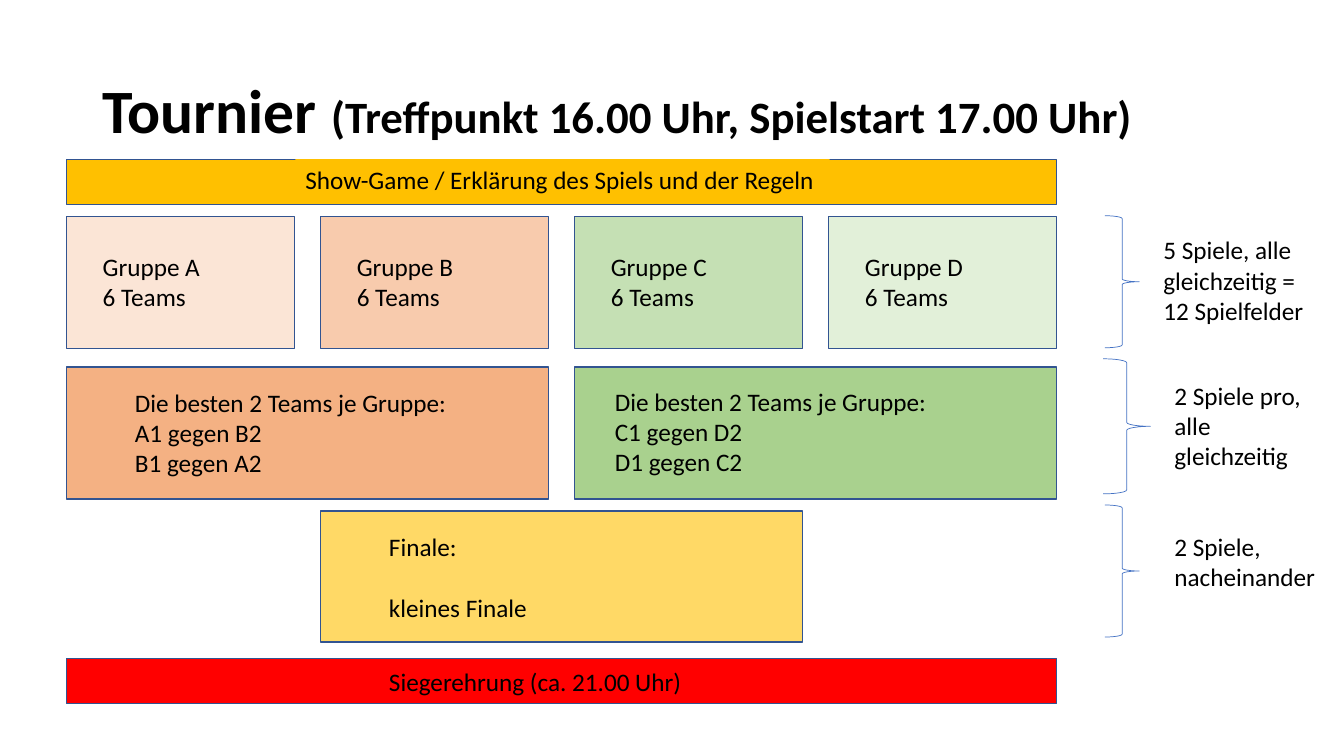
from dataclasses import dataclass

from pptx import Presentation
from pptx.dml.color import RGBColor
from pptx.enum.shapes import MSO_SHAPE
from pptx.enum.text import MSO_ANCHOR
from pptx.util import Inches, Pt

RECTANGLE = MSO_SHAPE.RECTANGLE
RIGHT_BRACE = MSO_SHAPE.RIGHT_BRACE
TOP = MSO_ANCHOR.TOP
MIDDLE = MSO_ANCHOR.MIDDLE

FONT = "Calibri"
COLORS = {
    "text": "000000",
    "outline": "325491",
    "brace": "4472C4",
    "show": "FFC000",
    "group_a": "FBE5D6",
    "group_b": "F8CBAD",
    "group_c": "C5E0B4",
    "group_d": "E2F0D9",
    "semifinal_ab": "F4B183",
    "semifinal_cd": "A9D18E",
    "final": "FFD966",
    "ceremony": "FF0000",
}

GRID_LEFT = 0.66
COLUMN_PITCH = 2.52
COLUMN_GAP = 0.26
LINE_HEIGHT = 0.3
LABEL_PADDING = 0.1


@dataclass(frozen=True)
class Panel:
    column: int
    span: int
    top: float
    height: float
    color: str
    lines: tuple[str, ...]
    label_indent: float
    label_top: float
    label_width: float
    gap: float = 0


@dataclass(frozen=True)
class Note:
    text: str
    left: float
    top: float
    height: float
    brace: tuple[float, float, float, float]


GROUPS = [
    Panel(column, 1, 2.15, 1.31, f"group_{letter.lower()}",
          (f"Gruppe {letter}", "6 Teams"), 0.26, 2.44, 1.59)
    for column, letter in enumerate("ABCD")
]
BEST_TEAMS = "Die besten 2 Teams je Gruppe:"
PANELS = GROUPS + [
    Panel(0, 2, 3.64, 1.31, "semifinal_ab",
          (BEST_TEAMS, "A1 gegen B2", "B1 gegen A2"), 0.58, 3.79, 3.36),
    Panel(2, 2, 3.64, 1.31, "semifinal_cd",
          (BEST_TEAMS, "C1 gegen D2", "D1 gegen C2"), 0.3, 3.78, 3.36),
    Panel(1, 2, 5.07, 1.3, "final",
          ("Finale:", "kleines Finale"), 0.58, 5.22, 3.36, 22),
    Panel(0, 4, 6.53, 0.45, "ceremony",
          ("Siegerehrung (ca. 21.00 Uhr)",), 3.1, 6.56, 5.3),
    Panel(0, 4, 1.58, 0.45, "show",
          ("Show-Game / Erklärung des Spiels und der Regeln",), 2.27, 1.58, 5.3),
]
NOTES = [
    Note("5 Spiele, alle gleichzeitig = 12 Spielfelder", 11.44, 2.28, 1.01,
         (10.96, 2.14, 0.34, 1.31)),
    Note("2 Spiele pro, alle gleichzeitig", 11.55, 3.72, 1.01,
         (10.94, 3.56, 0.47, 1.34)),
    Note("2 Spiele, nacheinander", 11.55, 5.22, 0.71,
         (10.96, 5.01, 0.34, 1.31)),
]


def rgb(name: str) -> RGBColor:
    return RGBColor.from_string(COLORS[name])


def add_text(shapes, box, paragraphs, *, size=18, bold=False, fill=None,
             anchor=TOP, line_spacing=None, gap=0):
    shape = shapes.add_textbox(*map(Inches, box))
    if fill:
        shape.fill.solid()
        shape.fill.fore_color.rgb = rgb(fill)
    frame = shape.text_frame
    frame.word_wrap = True
    frame.vertical_anchor = anchor
    for index, runs in enumerate(paragraphs):
        paragraph = frame.add_paragraph() if index else frame.paragraphs[0]
        if line_spacing:
            paragraph.line_spacing = line_spacing
        if index and gap:
            paragraph.space_before = Pt(gap)
        for text, run_size in runs:
            run = paragraph.add_run()
            run.text = text
            run.font.name = FONT
            run.font.size = Pt(run_size or size)
            run.font.bold = bold
            run.font.color.rgb = rgb("text")


def add_outline(shapes, kind, box, *, line, width, fill=None):
    shape = shapes.add_shape(kind, *map(Inches, box))
    shape.shadow.inherit = False
    shape.line.color.rgb = rgb(line)
    shape.line.width = Pt(width)
    if fill:
        shape.fill.solid()
        shape.fill.fore_color.rgb = rgb(fill)
    else:
        shape.fill.background()


def draw_panel(slide, panel: Panel) -> None:
    shapes = slide.shapes.add_group_shape().shapes
    left = GRID_LEFT + panel.column * COLUMN_PITCH
    width = panel.span * COLUMN_PITCH - COLUMN_GAP
    add_outline(shapes, RECTANGLE, (left, panel.top, width, panel.height),
                line="outline", width=1, fill=panel.color)
    label_height = (len(panel.lines) * LINE_HEIGHT + LABEL_PADDING
                    + panel.gap / 72)
    add_text(shapes,
             (left + panel.label_indent, panel.label_top,
              panel.label_width, label_height),
             [[(line, None)] for line in panel.lines],
             fill=panel.color, gap=panel.gap)


def draw_note(slide, note: Note) -> None:
    add_outline(slide.shapes, RIGHT_BRACE, note.brace, line="brace", width=0.5)
    add_text(slide.shapes, (note.left, note.top, 1.73, note.height),
             [[(note.text, None)]])


def main() -> None:
    presentation = Presentation()
    presentation.slide_width = Inches(13.33)
    presentation.slide_height = Inches(7.5)
    slide = presentation.slides.add_slide(presentation.slide_layouts[6])
    add_text(slide.shapes, (0.92, 0.4, 11.5, 1.45),
             [[("Tournier ", 44),
               ("(Treffpunkt 16.00 Uhr, Spielstart 17.00 Uhr)", 32)]],
             bold=True, anchor=MIDDLE, line_spacing=0.9)
    for panel in PANELS:
        draw_panel(slide, panel)
    for note in NOTES:
        draw_note(slide, note)
    presentation.save("out.pptx")


if __name__ == "__main__":
    main()
